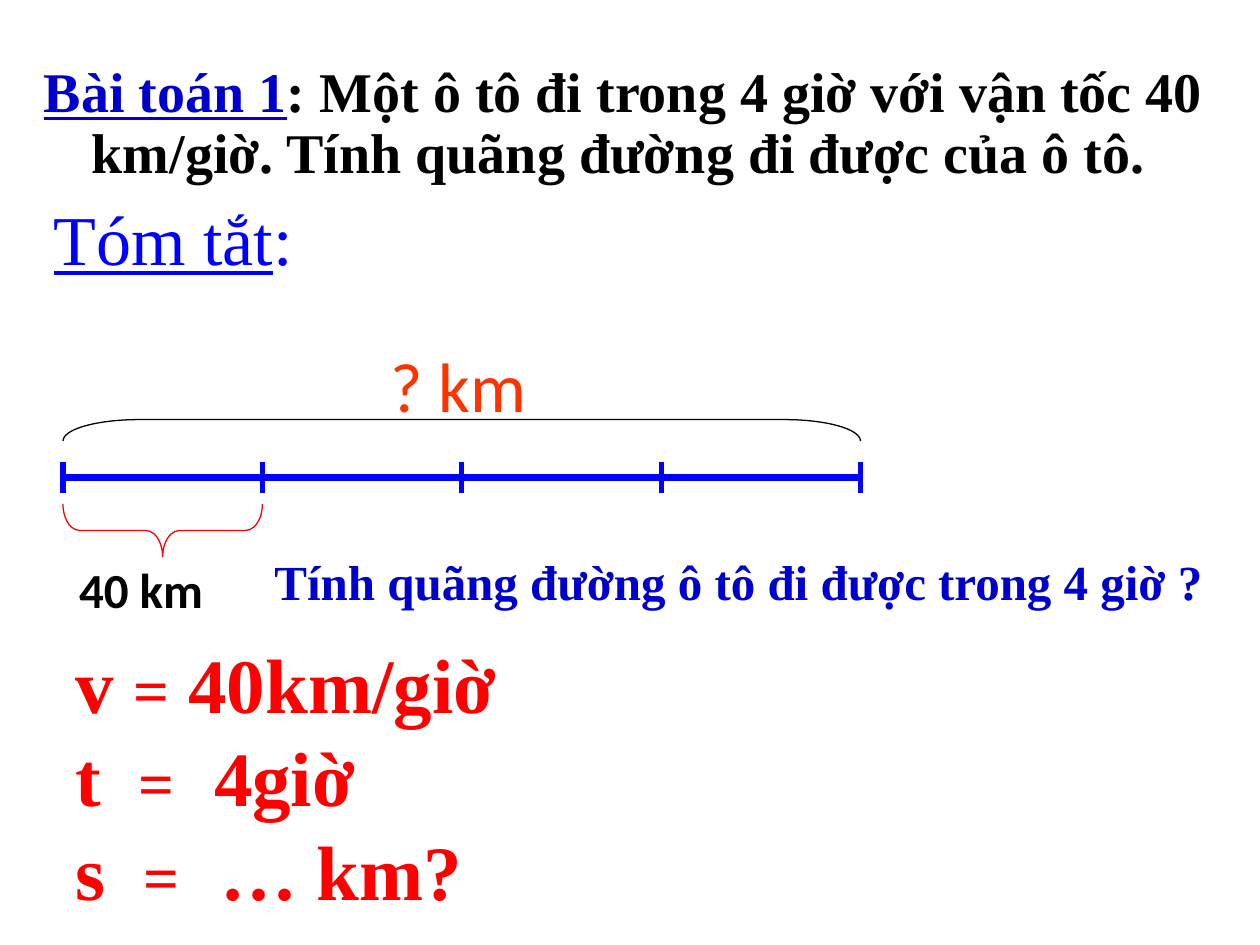
from dataclasses import dataclass

from lxml import etree
from pptx import Presentation
from pptx.dml.color import RGBColor
from pptx.enum.shapes import MSO_CONNECTOR, MSO_SHAPE
from pptx.oxml.ns import qn
from pptx.util import Inches, Pt

STRAIGHT = MSO_CONNECTOR.STRAIGHT
LEFT_BRACE = MSO_SHAPE.LEFT_BRACE
RIGHT_BRACKET = MSO_SHAPE.RIGHT_BRACKET


@dataclass(frozen=True)
class Theme:
    serif: str = "Times New Roman"
    sans: str = "Calibri"
    black: str = "000000"
    navy: str = "0000CC"
    blue: str = "0000FF"
    red: str = "FF0000"
    orange: str = "FF3300"
    body: int = 32
    note: int = 28
    heading: int = 40
    given: int = 44
    equals: int = 36


theme = Theme()
prs = Presentation()
prs.slide_width, prs.slide_height = Inches(10), Inches(7.5)
slide = prs.slides.add_slide(prs.slide_layouts[6])


def add_text(left, top, width, height, runs, *, size, color, font=theme.serif,
             bold=False, wrap=True, before=50, spacing=None, hanging=0, tabs=()):
    """Each run is (text, overrides of size, color or underline)."""
    frame = slide.shapes.add_textbox(
        Inches(left), Inches(top), Inches(width), Inches(height)).text_frame
    frame.word_wrap = wrap
    paragraph = frame.paragraphs[0]
    if spacing:
        paragraph.line_spacing = spacing
    props = paragraph._p.get_or_add_pPr()
    if hanging:
        props.set("marL", str(Inches(hanging)))
        props.set("indent", str(-Inches(hanging)))
    space = etree.SubElement(props, qn("a:spcBef"))
    etree.SubElement(space, qn("a:spcPct"), val=str(before * 1000))
    if tabs:
        stops = etree.SubElement(props, qn("a:tabLst"))
        for stop in tabs:
            etree.SubElement(stops, qn("a:tab"), pos=str(Inches(stop)), algn="l")
    for text, look in runs:
        run = paragraph.add_run()
        run.text = text
        run.font.name = font
        run.font.bold = bold
        run.font.size = Pt(look.get("size", size))
        run.font.underline = look.get("underline", False)
        run.font.color.rgb = RGBColor.from_string(look.get("color", color))


def add_line(x1, y1, x2, y2, weight):
    line = slide.shapes.add_connector(
        STRAIGHT, Inches(x1), Inches(y1), Inches(x2), Inches(y2))
    line.line.color.rgb = RGBColor.from_string(theme.blue)
    line.line.width = Pt(weight)
    etree.SubElement(line._element.spPr, qn("a:effectLst"))


# Problem statement and summary heading
add_text(0.25, 0.46, 10, 1.38,
         [("Bài toán 1", {"color": theme.navy, "underline": True}),
          (": Một ô tô đi trong 4 giờ với vận tốc 40 km/giờ. "
           "Tính quãng đường đi được của ô tô.", {})],
         size=theme.body, color=theme.black, bold=True,
         before=20, spacing=0.9, hanging=0.38)
add_text(0.33, 1.5, 2.17, 0.77, [("Tóm tắt", {"underline": True}), (":", {})],
         size=theme.heading, color=theme.blue)

# Distance line: one segment per hour, with a tick at each end
start, end, hours, axis_y, tick = 0.5, 6.83, 4, 3.79, 0.125
hour_width = (end - start) / hours
for hour in range(hours + 1):
    x = start + hour * hour_width
    if hour < hours:
        add_line(x, axis_y, x + hour_width, axis_y, 4.5)
    add_line(x, axis_y - tick, x, axis_y + tick, 3)

# Braces for one hour and for the whole distance, turned on their sides
for preset, span, depth, middle_y, curve, color in (
        (LEFT_BRACE, hour_width, 0.42, 4.21, 0.317, theme.red),
        (RIGHT_BRACKET, end - start, 0.17, 3.415, 3.541, theme.black)):
    brace = slide.shapes.add_shape(
        preset, Inches(start + span / 2 - depth / 2), Inches(middle_y - span / 2),
        Inches(depth), Inches(span))
    brace.rotation = 270
    brace.adjustments[0] = curve
    brace.shadow.inherit = False
    brace.fill.background()
    brace.line.color.rgb = RGBColor.from_string(color)
    brace.line.width = Pt(0.75)

# Distance labels and question
add_text(0.53, 4.39, 1.97, 0.57, [("40 km", {})], size=theme.note,
         color=theme.black, font=theme.sans, bold=True, before=0)
add_text(3, 2.67, 2, 0.77, [("? km", {})], size=theme.heading,
         color=theme.orange, font=theme.sans)
add_text(2.08, 4.33, 7.65, 0.57,
         [("Tính quãng đường ô tô đi được trong 4 giờ ?", {})],
         size=theme.note, color=theme.navy, bold=True, wrap=False)

# Given values
givens = (("v ", " 40km/giờ", ()),
          ("t\t", "\t4giờ", (0.5, 1.1)),
          ("s\t", "\t… km?", (0.54, 1.15)))
for row, (symbol, value, tabs) in enumerate(givens):
    add_text(0.5, 5 + row * 0.745, 3.75, 0.84,
             [(symbol, {}), ("=", {"size": theme.equals}), (value, {})],
             size=theme.given, color=theme.red, bold=True, tabs=tabs)

prs.save("out.pptx")
